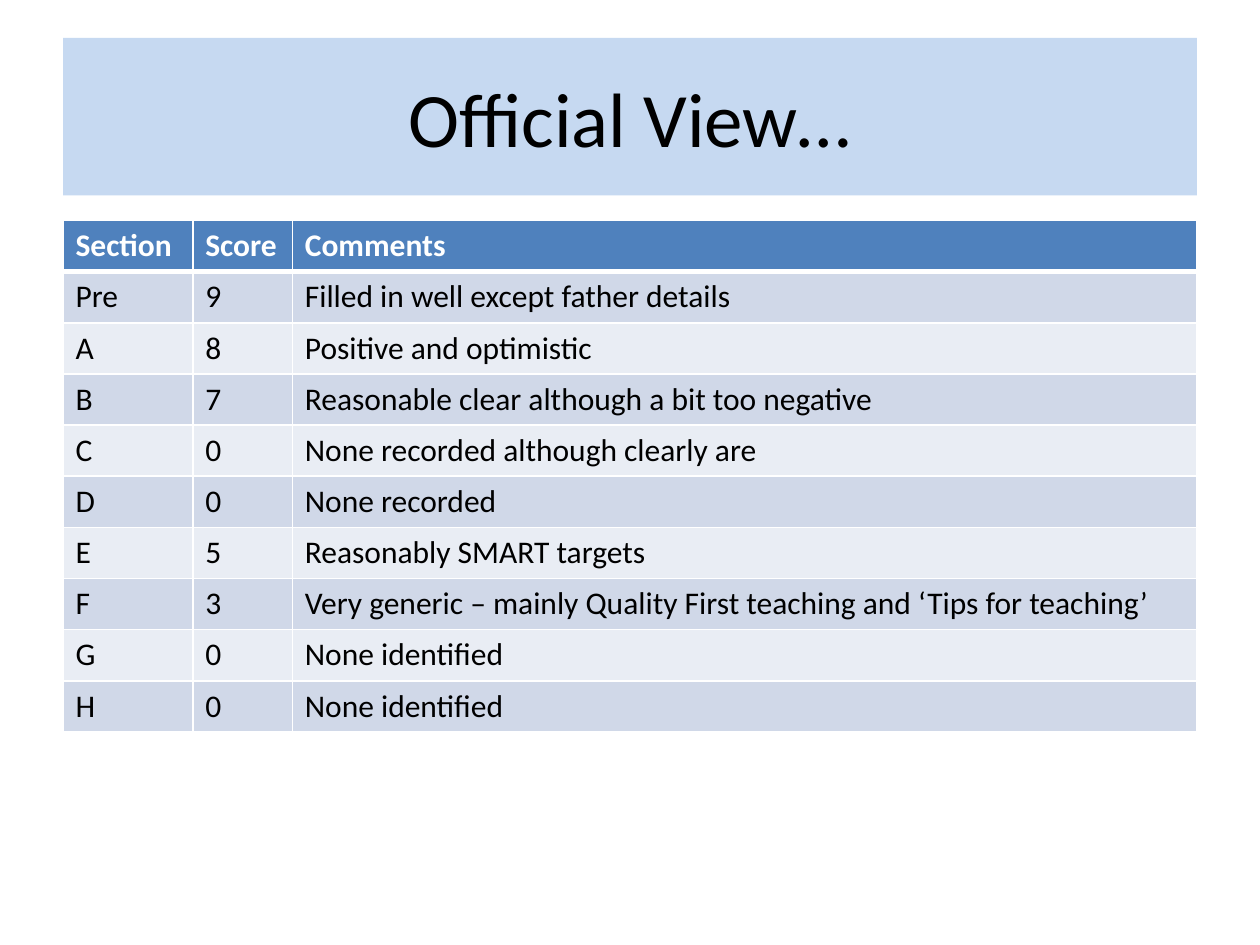
"""Builds the Official View slide: a title band above a table of section scores."""
import pptx
import pptx.dml.color
import pptx.enum.text
import pptx.oxml
import pptx.oxml.ns
import pptx.util

Inches, Pt = pptx.util.Inches, pptx.util.Pt

TITLE = "Official View…"
ROWS = [
    ("Section", "Score", "Comments"),
    ("Pre", "9", "Filled in well except father details"),
    ("A", "8", "Positive and optimistic"),
    ("B", "7", "Reasonable clear although a bit too negative"),
    ("C", "0", "None recorded although clearly are"),
    ("D", "0", "None recorded"),
    ("E", "5", "Reasonably SMART targets"),
    ("F", "3", "Very generic – mainly Quality First teaching and ‘Tips for teaching’"),
    ("G", "0", "None identified"),
    ("H", "0", "None identified"),
]
LEFT, WIDTH = 0.5, 9
COLS = (1.03, 0.79, 7.18)
ROW_H = 4.06 / len(ROWS)
HEAD, BANDS = "4F81BD", ("E9EDF4", "D0D8E8")
WHITE, BLACK = "FFFFFF", "000000"


def paint(fill, color):
    fill.solid()
    fill.fore_color.rgb = pptx.dml.color.RGBColor.from_string(color)


def style(para, size, color, bold=False):
    font = para.font
    font.name, font.size, font.bold = "Calibri", Pt(size), bold
    paint(font.fill, color)


def border(cell, row):
    props = cell._tc.get_or_add_tcPr()
    widths = {"L": 1, "R": 1, "T": 3 if row == 1 else 1, "B": 3 if row == 0 else 1}
    for side, width in widths.items():
        props.append(pptx.oxml.parse_xml(
            f'<a:ln{side} {pptx.oxml.ns.nsdecls("a")} w="{Pt(width)}">'
            f'<a:solidFill><a:srgbClr val="{WHITE}"/></a:solidFill></a:ln{side}>'))


def add_title(slide):
    title = slide.shapes.title
    title.left, title.top = Inches(LEFT), Inches(0.3)
    title.width, title.height = Inches(WIDTH), Inches(1.25)
    paint(title.fill, "C6D9F1")
    frame = title.text_frame
    frame.text = TITLE
    frame.vertical_anchor = pptx.enum.text.MSO_ANCHOR.MIDDLE
    para = frame.paragraphs[0]
    para.alignment = pptx.enum.text.PP_ALIGN.CENTER
    style(para, 44, BLACK)


def add_scores(slide):
    table = slide.shapes.add_table(
        len(ROWS), len(COLS), Inches(LEFT), Inches(1.75),
        Inches(WIDTH), Inches(ROW_H * len(ROWS))).table
    for col, width in zip(table.columns, COLS):
        col.width = Inches(width)
    for r, texts in enumerate(ROWS):
        table.rows[r].height = Inches(ROW_H)
        head = r == 0
        for c, text in enumerate(texts):
            cell = table.cell(r, c)
            cell.text = text
            border(cell, r)
            paint(cell.fill, HEAD if head else BANDS[r % 2])
            style(cell.text_frame.paragraphs[0], 18, WHITE if head else BLACK, head)


def main():
    deck = pptx.Presentation()
    deck.slide_width, deck.slide_height = Inches(10), Inches(7.5)
    slide = deck.slides.add_slide(deck.slide_layouts[5])
    add_title(slide)
    add_scores(slide)
    deck.save("out.pptx")


if __name__ == "__main__":
    main()
